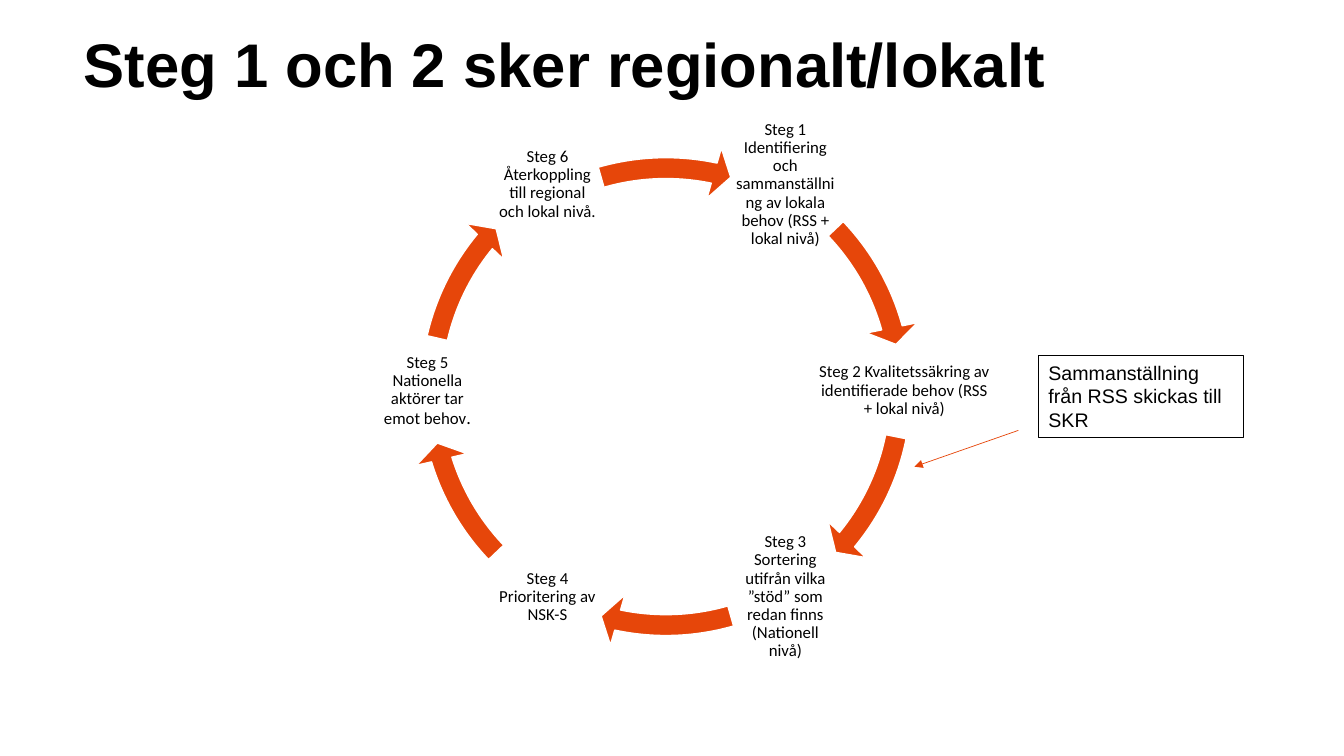
"""Build a slide with a six-step cycle and a side note."""
import pptx
import pptx.dml.color
import pptx.enum.shapes
import pptx.enum.text
import pptx.oxml
import pptx.oxml.ns
import pptx.util

Inches = pptx.util.Inches
Pt = pptx.util.Pt
RGBColor = pptx.dml.color.RGBColor
Align = pptx.enum.text.PP_ALIGN
Anchor = pptx.enum.text.MSO_ANCHOR
Fit = pptx.enum.text.MSO_AUTO_SIZE
Shape = pptx.enum.shapes.MSO_SHAPE

BLACK = RGBColor(0x00, 0x00, 0x00)
WHITE = RGBColor(0xFF, 0xFF, 0xFF)
ORANGE = RGBColor(0xE6, 0x46, 0x0A)

STEPS = [
    ((7.26, 1.3, 1.06, 1.06),
     [("Steg 1 Identifiering och sammanställning av lokala behov (RSS + lokal nivå)", 12)],
     1.29, 316.37, 344.48),
    ((8.09, 3.41, 1.76, 0.93),
     [("Steg 2 Kvalitetssäkring av identifierade behov (RSS + lokal nivå)", 12)],
     1.29, 11.35, 39.47),
    ((7.26, 5.39, 1.06, 1.06),
     [("Steg 3 Sortering utifrån vilka ”stöd” som redan finns (Nationell nivå)", 12)],
     1.29, 73.97, 101.87),
    ((4.9, 5.39, 1.06, 1.06),
     [("Steg 4 Prioritering av NSK-S", 12)],
     1.29, 136.37, 162.9),
    ((3.71, 3.35, 1.06, 1.06),
     [("Steg 5 Nationella aktörer tar emot behov", 12), (".", 13)],
     1.29, 192.93, 219.47),
    ((4.9, 1.3, 1.06, 1.06),
     [("Steg 6 Återkoppling till regional och lokal nivå.", 12)],
     1.41, 253.97, 281.87),
]


class Deck:
    def __init__(self):
        self.show = pptx.Presentation()
        self.show.slide_width = Inches(13.33)
        self.show.slide_height = Inches(7.5)
        self.slide = self.show.slides.add_slide(self.show.slide_layouts[5])
        self.ring = self.slide.shapes.add_group_shape().shapes

    def add_runs(self, para, runs, font, bold=False):
        for text, size in runs:
            run = para.add_run()
            run.text = text
            run.font.name = font
            run.font.size = Pt(size)
            run.font.bold = bold
            run.font.color.rgb = BLACK

    def title(self, box, text):
        head = self.slide.shapes.title
        head.left, head.top, head.width, head.height = map(Inches, box)
        frame = head.text_frame
        frame.word_wrap = True
        frame.auto_size = Fit.NONE
        frame.vertical_anchor = Anchor.TOP
        para = frame.paragraphs[0]
        para.alignment = Align.LEFT
        para.line_spacing = 0.95
        self.add_runs(para, [(text, 44)], "Arial", True)

    def step(self, box, runs):
        frame = self.ring.add_textbox(*map(Inches, box)).text_frame
        frame.word_wrap = True
        frame.vertical_anchor = Anchor.MIDDLE
        frame.margin_left = frame.margin_right = Inches(0.02)
        frame.margin_top = frame.margin_bottom = Inches(0.02)
        para = frame.paragraphs[0]
        para.alignment = Align.CENTER
        para.line_spacing = 0.9
        para.space_after = Pt(4.2)
        self.add_runs(para, runs, "Calibri")

    def arc(self, top, start, end):
        arc = self.ring.add_shape(
            Shape.CIRCULAR_ARROW, Inches(4.02), Inches(top), Inches(5.17), Inches(5.17))
        arc.shadow.inherit = False
        arc.fill.solid()
        arc.fill.fore_color.rgb = ORANGE
        arc.line.color.rgb = WHITE
        arc.line.width = Pt(1)
        tune = (0.04, 2.5, end * 0.6, start * 0.6, 0.05)
        for spot, value in enumerate(tune):
            arc.adjustments[spot] = value

    def note(self, box, text):
        note = self.slide.shapes.add_shape(Shape.RECTANGLE, *map(Inches, box))
        note.shadow.inherit = False
        note.fill.background()
        note.line.color.rgb = BLACK
        note.line.width = Pt(0.75)
        frame = note.text_frame
        frame.word_wrap = True
        frame.auto_size = Fit.SHAPE_TO_FIT_TEXT
        frame.vertical_anchor = Anchor.TOP
        para = frame.paragraphs[0]
        para.alignment = Align.LEFT
        self.add_runs(para, [(text, 14)], "Arial")

    def arrow(self, ends):
        line = self.slide.shapes.add_connector(
            pptx.enum.shapes.MSO_CONNECTOR.STRAIGHT, *map(Inches, ends))
        line.line.color.rgb = ORANGE
        line.line.width = Pt(0.5)
        space = pptx.oxml.ns.nsdecls("a")
        props = line._element.spPr
        tip = pptx.oxml.parse_xml(f'<a:tailEnd {space} type="triangle"/>')
        props.find(pptx.oxml.ns.qn("a:ln")).append(tip)
        props.append(pptx.oxml.parse_xml(f"<a:effectLst {space}/>"))


def main():
    deck = Deck()
    deck.title((0.73, 0.26, 11.61, 1.35), "Steg 1 och 2 sker regionalt/lokalt")
    for box, runs, top, start, end in STEPS:
        deck.step(box, runs)
        deck.arc(top, start, end)
    deck.note((10.3, 3.53, 2.03, 0.81), "Sammanställning från RSS skickas till SKR")
    deck.arrow((10.1, 4.27, 9.07, 4.63))
    deck.show.save("out.pptx")


if __name__ == "__main__":
    main()
